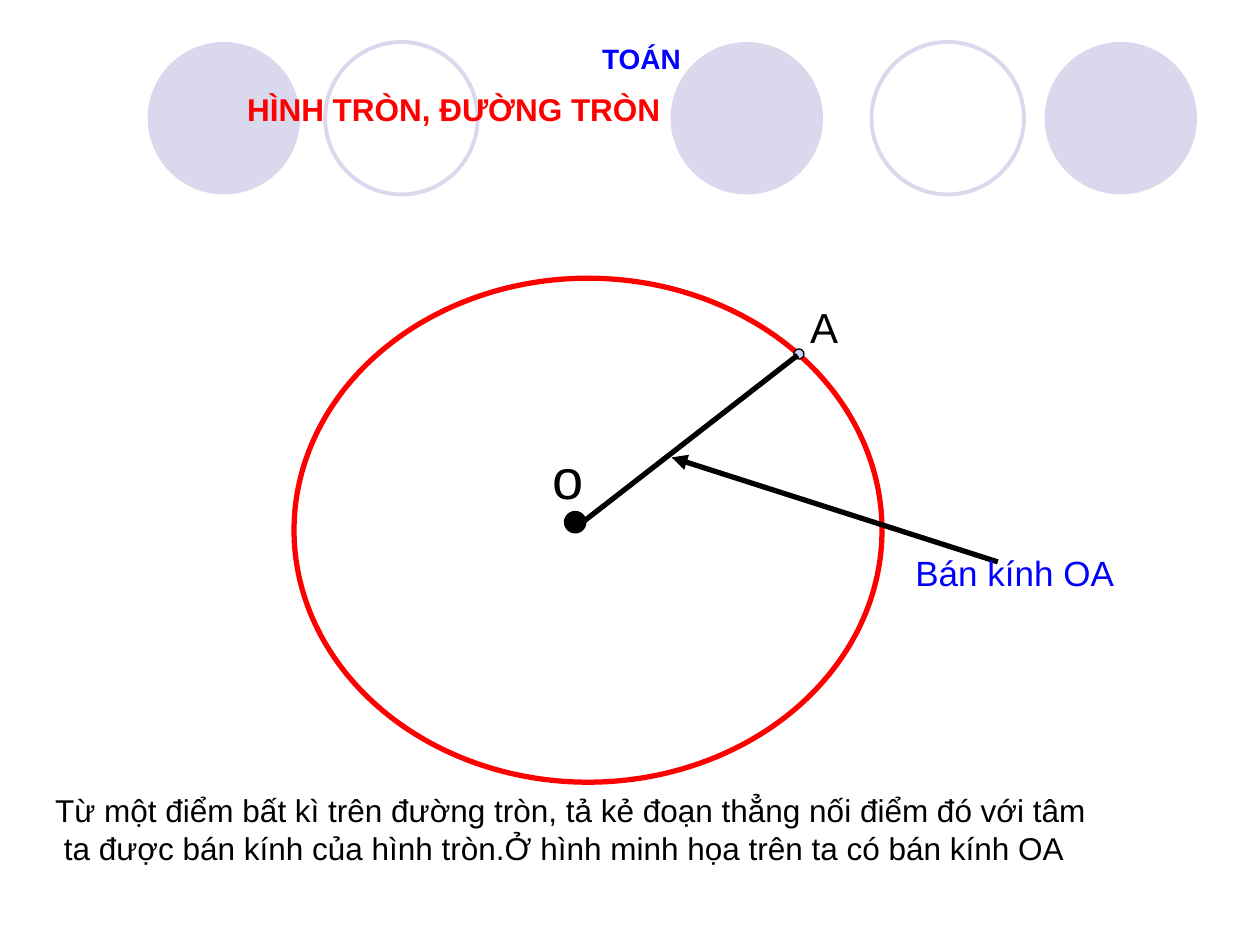
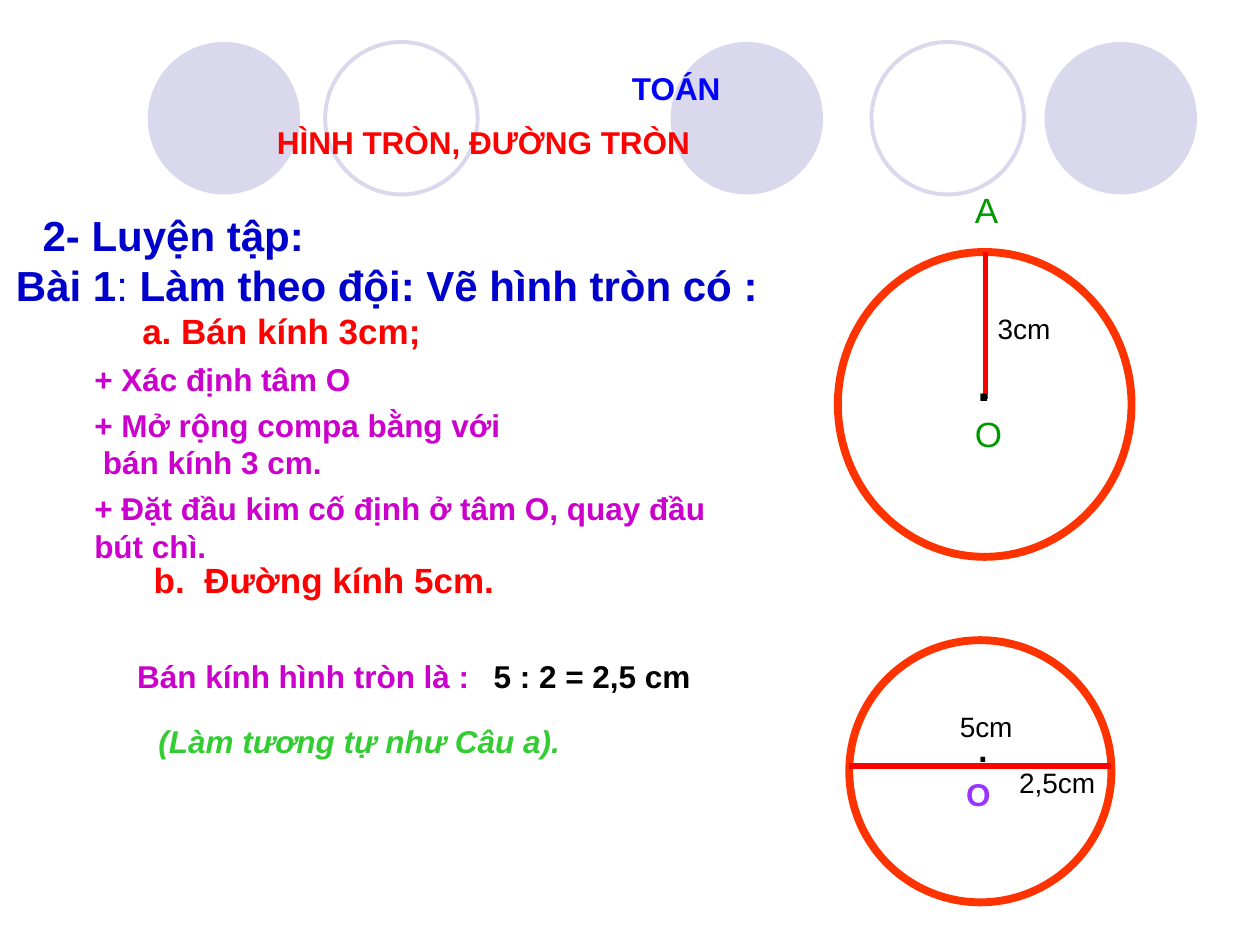
from dataclasses import dataclass

from lxml import etree
from pptx import Presentation
from pptx.dml.color import RGBColor
from pptx.enum.shapes import MSO_CONNECTOR, MSO_SHAPE
from pptx.enum.text import MSO_ANCHOR, PP_ALIGN
from pptx.oxml.ns import qn
from pptx.util import Pt

STRAIGHT = MSO_CONNECTOR.STRAIGHT
ELLIPSE = MSO_SHAPE.OVAL
CENTRE_DOT = MSO_SHAPE.FLOWCHART_CONNECTOR
TOP = MSO_ANCHOR.TOP
LEFT = PP_ALIGN.LEFT

FONT = "Arial"
BLACK, RED, BLUE = "000000", "FF0000", "0000FF"
NAVY, MAGENTA, GREEN, LIME = "0000CC", "CC00CC", "009900", "33CC33"
VIOLET, ORANGE, LAVENDER, PALE_BLUE = "9933FF", "FF3300", "D9D8EC", "CCCCFF"


@dataclass(frozen=True)
class Round:
    """A circle or an ellipse."""
    left: float
    top: float
    width: float
    height: float
    fill: str = ""
    line: str = ""
    weight: float = 0.75
    preset: int = ELLIPSE


@dataclass(frozen=True)
class Segment:
    x1: float
    y1: float
    x2: float
    y2: float
    color: str
    arrow: bool = False


@dataclass(frozen=True)
class Label:
    left: float
    top: float
    width: float
    text: str
    size: float
    color: str = BLACK
    bold: bool = False
    italic: bool = False


BAND_SIZE = 87.1
BAND = [
    Round(left, 24, BAND_SIZE, BAND_SIZE, fill=fill, line=line, weight=2.25)
    for left, fill, line in (
        (84.4, LAVENDER, ""),
        (185.8, "", LAVENDER),
        (383.2, LAVENDER, ""),
        (498, "", LAVENDER),
        (596.9, LAVENDER, ""),
    )
]

RADIUS_ROUNDS = [
    Round(168, 159, 336, 288, line=RED, weight=3),
    Round(453.6, 199.4, 5.8, 5.8, fill=PALE_BLUE, line=BLACK),
    Round(322.6, 292.3, 12.2, 12.2, fill=BLACK, line=BLACK, preset=CENTRE_DOT),
]
RADIUS_SEGMENTS = [
    Segment(455.8, 203, 326.9, 303.1, BLACK),
    Segment(570.2, 321.1, 383.8, 261.4, BLACK, arrow=True),
]
RADIUS_LABELS = [
    Label(308.9, 249.8, 43, "o", 32),
    Label(455.8, 168.5, 31, "A", 24),
    Label(24.5, 448.6, 640,
          "Từ một điểm bất kì trên đường tròn, tả kẻ đoạn thẳng nối điểm đó với tâm\n"
          " ta được bán kính của hình tròn.Ở hình minh họa trên ta có bán kính OA", 18),
    Label(516, 311.8, 140, "Bán kính OA", 20, BLUE),
]

PRACTICE_ROUNDS = [
    Round(478.8, 144, 167.8, 174.2, line=ORANGE, weight=4.5),
    Round(485.3, 365.8, 149.8, 149.8, line=ORANGE, weight=4.5),
]
PRACTICE_SEGMENTS = [
    Segment(485.3, 437.8, 635, 437.8, RED),
    Segment(563, 228.2, 563, 144, RED),
]
PRACTICE_LABELS = [
    Label(17.3, 116.2, 216, "2- Luyện tập:", 24, NAVY, bold=True),
    Label(74.2, 173.5, 190, "a. Bán kính 3cm;", 20, RED, bold=True),
    Label(46.8, 202.3, 180, "+ Xác định tâm O", 18, MAGENTA, bold=True),
    Label(46.8, 228.2, 294, "+ Mở rộng compa bằng với\n bán kính 3 cm.", 18, MAGENTA, bold=True),
    Label(46.8, 275.8, 366, "+ Đặt đầu kim cố định ở tâm O, quay đầu bút chì.", 18, MAGENTA, bold=True),
    Label(80.8, 315.4, 246, "b.  Đường kính 5cm.", 20, RED, bold=True),
    Label(71.3, 372.2, 216, "Bán kính hình tròn là :", 18, MAGENTA, bold=True),
    Label(275, 372.2, 146, "5 : 2 = 2,5 cm", 18, bold=True),
    Label(83.5, 409, 260, "(Làm tương tự như Câu a).", 18, LIME, bold=True, italic=True),
    Label(550, 104, 32, "A", 20, GREEN),
    Label(563, 174.2, 54, "3cm", 16),
    Label(550, 186, 26, ".", 40),
    Label(550, 232, 32, "O", 20, GREEN),
    Label(541.4, 401.8, 58, "5cm", 16),
    Label(550.8, 403.9, 24, ".", 28),
    Label(545, 439.5, 30, "O", 18, VIOLET, bold=True),
    Label(575.3, 433.8, 66, "2,5cm", 16),
]


def rgb(color: str) -> RGBColor:
    return RGBColor.from_string(color)


def write(frame, text: str, *, size: float, color: str = BLACK,
          bold: bool = False, italic: bool = False) -> None:
    """Append text to the last paragraph; each newline starts a new one."""
    for number, line in enumerate(text.split("\n")):
        paragraph = frame.add_paragraph() if number else frame.paragraphs[-1]
        paragraph.alignment = LEFT
        run = paragraph.add_run()
        run.text = line
        font = run.font
        font.name, font.size = FONT, Pt(size)
        font.bold, font.italic = bold, italic
        font.color.rgb = rgb(color)


def add_label(slide, label: Label):
    line_count = label.text.count("\n") + 1
    height = label.size * 1.15 * line_count + 7.2
    box = slide.shapes.add_textbox(Pt(label.left), Pt(label.top), Pt(label.width), Pt(height))
    frame = box.text_frame
    frame.word_wrap = True
    write(frame, label.text, size=label.size, color=label.color,
          bold=label.bold, italic=label.italic)
    return frame


def add_round(slide, item: Round):
    shape = slide.shapes.add_shape(
        item.preset, Pt(item.left), Pt(item.top), Pt(item.width), Pt(item.height))
    shape.shadow.inherit = False
    if item.fill:
        shape.fill.solid()
        shape.fill.fore_color.rgb = rgb(item.fill)
    else:
        shape.fill.background()
    if item.line:
        shape.line.color.rgb = rgb(item.line)
        shape.line.width = Pt(item.weight)
    else:
        shape.line.fill.background()
    return shape


def add_segment(slide, item: Segment) -> None:
    connector = slide.shapes.add_connector(
        STRAIGHT, Pt(item.x1), Pt(item.y1), Pt(item.x2), Pt(item.y2))
    connector.line.color.rgb = rgb(item.color)
    connector.line.width = Pt(3)
    properties = connector.element.spPr
    if item.arrow:
        etree.SubElement(properties.find(qn("a:ln")), qn("a:tailEnd"), type="triangle")
    etree.SubElement(properties, qn("a:effectLst"))


def add_heading(slide, left: float, top: float, subject_top: float, subject_size: float) -> None:
    """Place the lesson title and the subject name above it."""
    title = slide.shapes.title
    title.left, title.top, title.width, title.height = Pt(left), Pt(top), Pt(270), Pt(28)
    title.text_frame.vertical_anchor = TOP
    title.text_frame.word_wrap = True
    write(title.text_frame, "HÌNH TRÒN, ĐƯỜNG TRÒN", size=18, color=RED, bold=True)
    add_label(slide, Label(left + 203, subject_top, 90, "TOÁN", subject_size, BLUE, bold=True))


def add_band(layout, slide) -> None:
    """Draw the band of circles and move it into the layout, behind all else."""
    for item in BAND:
        layout.shapes.element.insert(2, add_round(slide, item).element)


def add_drawing(slide, rounds: list[Round], segments: list[Segment], labels: list[Label]) -> None:
    for item in rounds:
        add_round(slide, item)
    for segment in segments:
        add_segment(slide, segment)
    for label in labels:
        add_label(slide, label)


def main() -> None:
    deck = Presentation()
    deck.slide_width, deck.slide_height = Pt(720), Pt(540)
    title_only = deck.slide_layouts[5]

    radius = deck.slides.add_slide(title_only)
    add_band(title_only, radius)
    add_heading(radius, 134, 48, 20.2, 16)
    add_drawing(radius, RADIUS_ROUNDS, RADIUS_SEGMENTS, RADIUS_LABELS)

    practice = deck.slides.add_slide(title_only)
    add_heading(practice, 151, 66.5, 35.7, 18)
    add_drawing(practice, PRACTICE_ROUNDS, PRACTICE_SEGMENTS, PRACTICE_LABELS)
    exercise = add_label(practice, Label(2, 144.7, 445, "Bài 1", 24, NAVY, bold=True))
    write(exercise, ":", size=24, color=NAVY)
    write(exercise, " Làm theo đội: Vẽ hình tròn có :", size=24, color=NAVY, bold=True)

    deck.save("out.pptx")


if __name__ == "__main__":
    main()
